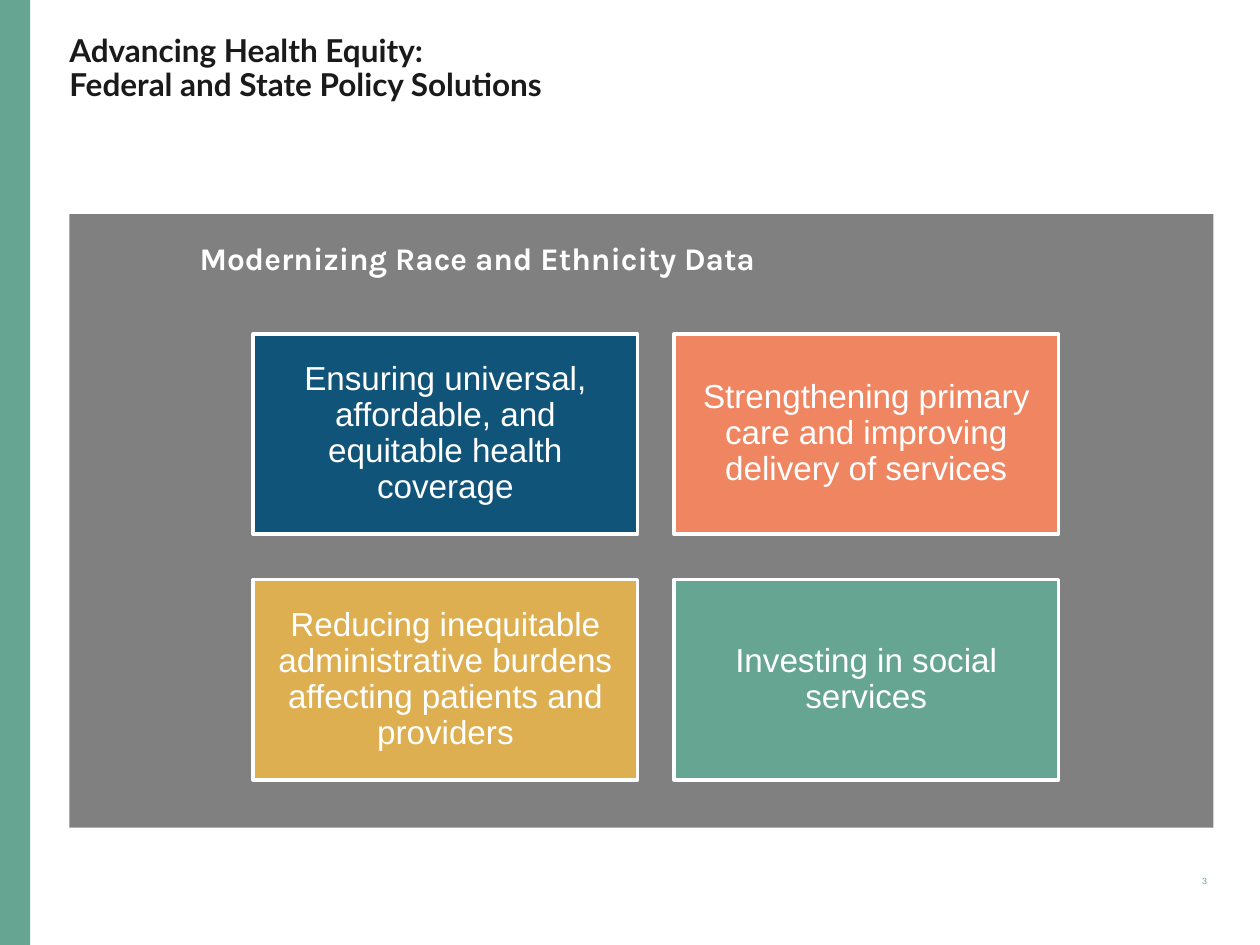
from pptx import Presentation
from pptx.dml.color import RGBColor
from pptx.enum.shapes import MSO_SHAPE
from pptx.enum.text import MSO_ANCHOR, MSO_AUTO_SIZE, PP_ALIGN
from pptx.util import Inches, Pt

TITLE = "Advancing Health Equity:\vFederal and State Policy Solutions"
HEADING = "Modernizing Race and Ethnicity Data"
PAGE_NUMBER = "3"
SOLUTIONS = [
    ("Ensuring universal, affordable, and equitable health coverage", "115479"),
    ("Strengthening primary care and improving delivery of services", "F08661"),
    ("Reducing inequitable administrative burdens affecting patients and providers", "DEAF50"),
    ("Investing in social services", "65A591"),
]
WHITE, INK, GREEN, GRAY = "FFFFFF", "1A1A1A", "65A591", "808080"
COLUMNS = 2
GRID_LEFT, GRID_TOP = 2.01, 2.65
CARD_WIDTH, CARD_HEIGHT = 3.05, 1.59
COLUMN_STEP, ROW_STEP = 3.34, 1.95


def color(value):
    return RGBColor.from_string(value)


def add_block(page, left, top, width, height, fill):
    block = page.shapes.add_shape(
        MSO_SHAPE.RECTANGLE, Inches(left), Inches(top), Inches(width), Inches(height))
    block.shadow.inherit = False
    block.fill.solid()
    block.fill.fore_color.rgb = color(fill)
    block.line.fill.background()
    return block


def add_text_box(page, left, top, width, height):
    return page.shapes.add_textbox(Inches(left), Inches(top), Inches(width), Inches(height))


def write(box, text, font, size, ink, align, anchor, inset=0, bold=False, wrap=True, spacing=0.9):
    frame = box.text_frame
    frame.text = text
    frame.word_wrap = wrap
    frame.auto_size = MSO_AUTO_SIZE.NONE
    frame.vertical_anchor = anchor
    frame.margin_left = frame.margin_right = Inches(inset)
    frame.margin_top = frame.margin_bottom = Inches(inset)
    para = frame.paragraphs[0]
    para.alignment = align
    para.line_spacing = spacing
    for span in para.runs:
        span.font.name = font
        span.font.size = Pt(size)
        span.font.bold = bold
        span.font.color.rgb = color(ink)


def main():
    """Build the health equity policy slide."""
    deck = Presentation()
    deck.slide_width, deck.slide_height = Inches(10), Inches(7.5)
    page = deck.slides.add_slide(deck.slide_layouts[5])

    add_block(page, 0, 0, 0.24, 7.5, GREEN)
    add_block(page, 0.55, 1.7, 9.08, 4.87, GRAY)

    title = page.shapes.title
    title.left, title.top = Inches(0.55), Inches(0.28)
    title.width, title.height = Inches(8.66), Inches(1.3)
    write(title, TITLE, "Lato", 18, INK, PP_ALIGN.LEFT, MSO_ANCHOR.TOP, bold=True)

    for index, (text, fill) in enumerate(SOLUTIONS):
        row, column = divmod(index, COLUMNS)
        card = add_block(page, GRID_LEFT + column * COLUMN_STEP, GRID_TOP + row * ROW_STEP,
                         CARD_WIDTH, CARD_HEIGHT, fill)
        card.line.color.rgb = color(WHITE)
        card.line.width = Pt(2)
        write(card, text, "Arial", 19, WHITE, PP_ALIGN.CENTER, MSO_ANCHOR.MIDDLE, inset=0.08)

    heading = add_text_box(page, 0.81, 1.88, 5.96, 0.46)
    write(heading, HEADING, "Karla", 18, WHITE, PP_ALIGN.CENTER, MSO_ANCHOR.TOP,
          inset=0.05, bold=True)

    number = add_text_box(page, 9.27, 6.88, 0.31, 0.22)
    write(number, PAGE_NUMBER, "Arial", 5.1, GREEN, PP_ALIGN.RIGHT, MSO_ANCHOR.MIDDLE,
          wrap=False, spacing=1.0)

    deck.save("out.pptx")


if __name__ == "__main__":
    main()
